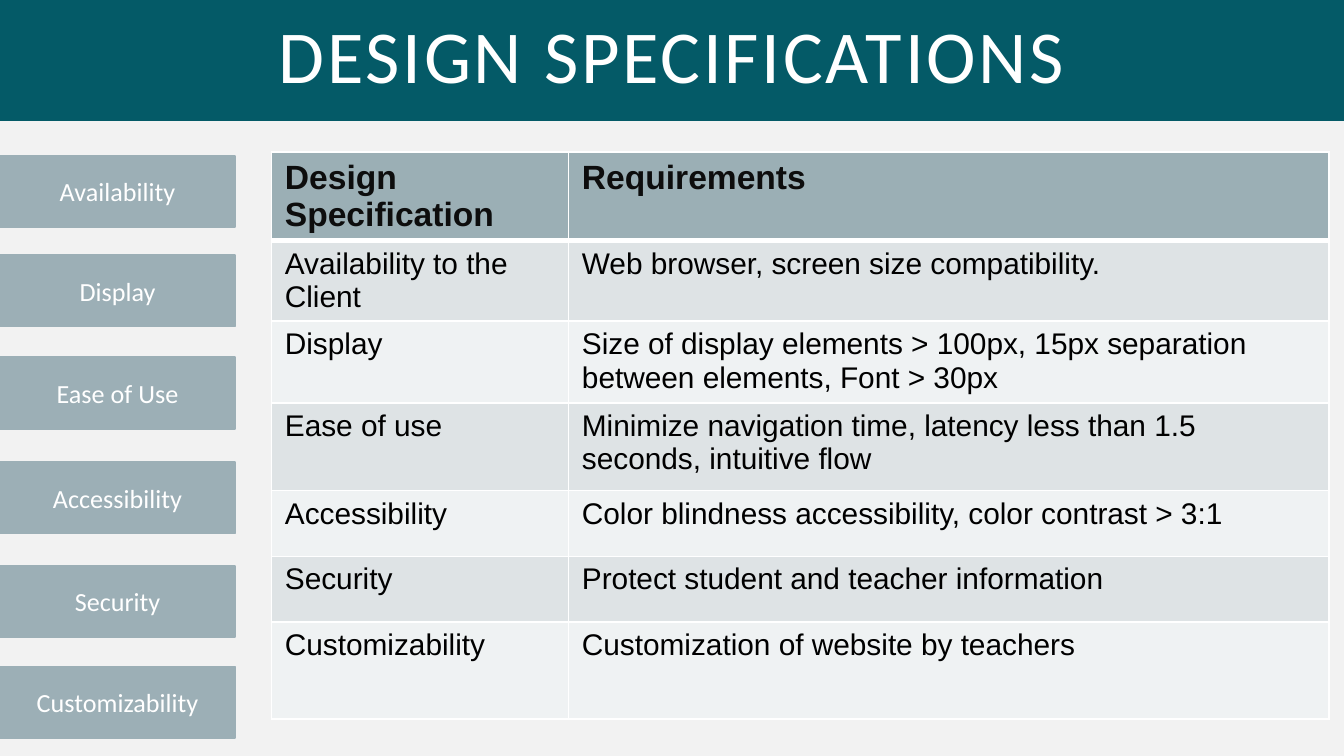
from lxml import etree
from pptx import Presentation
from pptx.dml.color import RGBColor
from pptx.enum import shapes, text
from pptx.oxml.ns import qn
from pptx.util import Inches, Pt

TITLE = "DESIGN SPECIFICATIONS"
TABS = [  # label, top
    ("Availability", 1.16),
    ("Display", 1.9),
    ("Ease of Use", 2.66),
    ("Accessibility", 3.44),
    ("Security", 4.21),
    ("Customizability", 4.96),
]
ROWS = [  # height, specification, requirements
    (0.66, "Design Specification", "Requirements"),
    (0.6, "Availability to the Client", "Web browser, screen size compatibility."),
    (0.61, "Display", "Size of display elements > 100px, 15px separation "
                      "between elements, Font > 30px"),
    (0.65, "Ease of use", "Minimize navigation time, latency less than 1.5 "
                          "seconds, intuitive flow"),
    (0.49, "Accessibility", "Color blindness accessibility, color contrast > 3:1"),
    (0.49, "Security", "Protect student and teacher information"),
    (0.72, "Customizability", "Customization of website by teachers"),
]
COLUMN_WIDTHS = [2.21, 5.66]
TEAL, SLATE, WHITE = "045A67", "9CAFB6", "FFFFFF"
HEADER, BANDS = "9BAFB5", ["EFF2F3", "DEE3E5"]


def rgb(color):
    return RGBColor.from_string(color)


def write(tf, words, size, font="Calibri", color=WHITE, bold=False,
          align=text.PP_ALIGN.CENTER, line_spacing=None, tracking=0):
    tf.word_wrap = True
    p = tf.paragraphs[0]
    p.alignment = align
    p.line_spacing = line_spacing
    r = p.add_run()
    r.text = words
    r.font.size, r.font.name, r.font.bold = Pt(size), font, bold
    r.font.color.rgb = rgb(color)
    if tracking:
        r.font._element.set("spc", str(int(tracking * 100)))


def add_box(slide, left, top, width, height, color, line_width):
    sp = slide.shapes.add_shape(shapes.MSO_SHAPE.RECTANGLE, Inches(left),
                                Inches(top), Inches(width), Inches(height))
    sp.shadow.inherit = False
    sp.fill.solid()
    sp.fill.fore_color.rgb = rgb(color)
    sp.line.color.rgb = rgb(color)
    sp.line.width = Pt(line_width)
    sp.text_frame.vertical_anchor = text.MSO_ANCHOR.MIDDLE
    return sp


def set_borders(cell, **widths):
    """Draw white cell borders; schema order is L, R, T, B, before the fill."""
    tc_pr = cell._tc.get_or_add_tcPr()
    for i, (side, width) in enumerate(widths.items()):
        ln = etree.Element(qn("a:ln" + side), w=str(Pt(width)))
        fill = etree.SubElement(ln, qn("a:solidFill"))
        etree.SubElement(fill, qn("a:srgbClr"), val=WHITE)
        tc_pr.insert(i, ln)


def add_requirements(slide):
    heights = [row[0] for row in ROWS]
    table = slide.shapes.add_table(
        len(ROWS), len(COLUMN_WIDTHS), Inches(2.02), Inches(1.13),
        Inches(sum(COLUMN_WIDTHS)), Inches(sum(heights))).table
    table.horz_banding = False
    for column, width in zip(table.columns, COLUMN_WIDTHS):
        column.width = Inches(width)
    for i, (height, *words) in enumerate(ROWS):
        table.rows[i].height = Inches(height)
        head = i == 0
        for j, entry in enumerate(words):
            cell = table.cell(i, j)
            cell.fill.solid()
            cell.fill.fore_color.rgb = rgb(HEADER if head else BANDS[i % 2])
            set_borders(cell, L=1, R=1, T=3 if i == 1 else 1, B=3 if head else 1)
            write(cell.text_frame, entry, 18 if head else 16, font="Arial",
                  color="0D0D0D" if head else "000000", bold=head,
                  align=text.PP_ALIGN.LEFT)


def main():
    prs = Presentation()
    prs.slide_width = Inches(10)
    prs.slide_height = prs.slide_width * 9 // 16
    slide = prs.slides.add_slide(prs.slide_layouts[6])
    slide.background.fill.solid()
    slide.background.fill.fore_color.rgb = rgb("F2F2F2")

    banner = add_box(slide, 0, 0, 10, 0.88, TEAL, 2.5)
    tf = banner.text_frame
    tf.margin_left = tf.margin_right = tf.margin_top = tf.margin_bottom = Inches(0.1)
    write(tf, TITLE, 40, line_spacing=0.9, tracking=1.5)

    for label, top in TABS:
        tab = add_box(slide, 0, top, 1.75, 0.53, SLATE, 1)
        write(tab.text_frame, label, 14)

    add_requirements(slide)
    prs.save("out.pptx")


if __name__ == "__main__":
    main()
